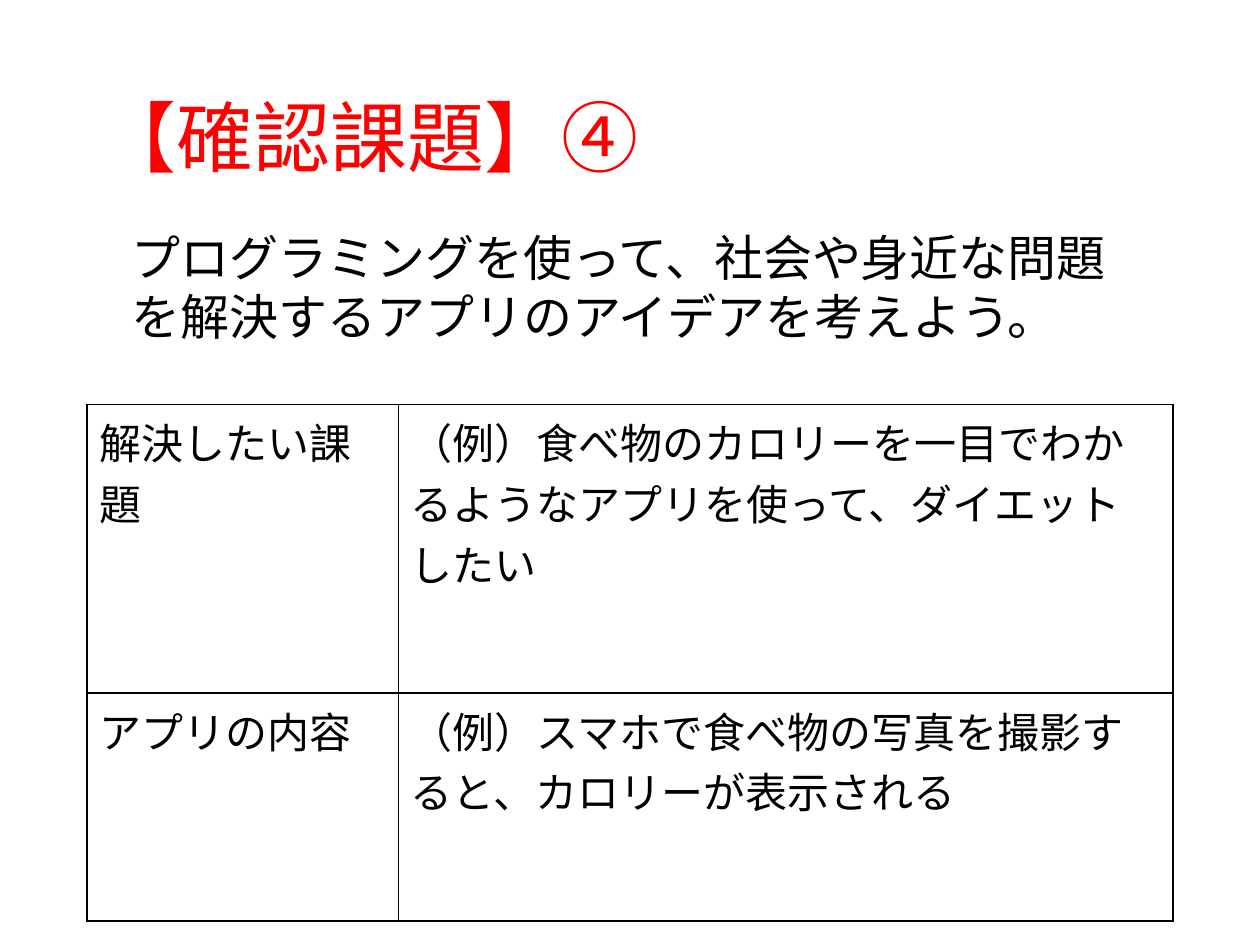
from lxml.etree import SubElement
from pptx import Presentation
from pptx.dml.color import RGBColor as Rgb
from pptx.enum.text import MSO_ANCHOR as Anchor, MSO_AUTO_SIZE as AutoSize, PP_ALIGN as Align
from pptx.oxml.ns import qn
from pptx.util import Cm, Pt

COLORS = {"heading": "FF0000", "text": "000000", "border": "000000"}
FONT = "Arial"
TITLE_ONLY = 5
IDEAS = [
    ("解決したい課題",
     "（例）食べ物のカロリーを一目でわかるようなアプリを使って、ダイエットしたい"),
    ("アプリの内容",
     "（例）スマホで食べ物の写真を撮影すると、カロリーが表示される"),
]


class WorksheetSlide:
    """Holds the style and the current slide."""

    def __init__(self, deck):
        self.slide = deck.slides.add_slide(deck.slide_layouts[TITLE_ONLY])

    def fill_text(self, frame, text, size, color="text", spacing=None):
        frame.word_wrap = True
        paragraph = frame.paragraphs[0]
        paragraph.alignment = Align.LEFT
        paragraph.line_spacing = spacing
        run = paragraph.add_run()
        run.text = text
        for name, value in {"name": FONT, "size": Pt(size)}.items():
            setattr(run.font, name, value)
        run.font.color.rgb = Rgb.from_string(COLORS[color])

    def title(self, text, box):
        heading = self.slide.shapes.title
        for name, value in zip(("left", "top", "width", "height"), box):
            setattr(heading, name, Cm(value))
        frame = heading.text_frame
        frame.auto_size = AutoSize.NONE
        frame.vertical_anchor = Anchor.MIDDLE
        self.fill_text(frame, text, 44, "heading", 0.9)

    def task(self, text, box):
        frame = self.slide.shapes.add_textbox(*map(Cm, box)).text_frame
        frame.auto_size = AutoSize.SHAPE_TO_FIT_TEXT
        self.fill_text(frame, text, 28)

    def border(self, cell):
        properties = cell._tc.get_or_add_tcPr()
        for position, side in enumerate(("lnL", "lnR", "lnT", "lnB")):
            line = properties.makeelement(qn(f"a:{side}"), {"w": str(Pt(1))})
            fill = SubElement(line, qn("a:solidFill"))
            SubElement(fill, qn("a:srgbClr"), val=COLORS["border"])
            properties.insert(position, line)

    def table(self, rows, left, top, widths, heights):
        box = map(Cm, (left, top, sum(widths), sum(heights)))
        grid = self.slide.shapes.add_table(len(rows), len(widths), *box).table
        grid.first_row = grid.horz_banding = False
        for column, width in zip(grid.columns, widths):
            column.width = Cm(width)
        for row, height, texts in zip(grid.rows, heights, rows):
            row.height = Cm(height)
            for cell, text in zip(row.cells, texts):
                cell.fill.background()
                self.border(cell)
                self.fill_text(cell.text_frame, text, 24)


def main():
    deck = Presentation()
    deck.slide_width, deck.slide_height = Cm(25.4), Cm(19.05)
    sheet = WorksheetSlide(deck)

    # Heading and task
    sheet.title("【確認課題】➃", (1.75, 1.02, 21.9, 3.68))
    sheet.task("プログラミングを使って、社会や身近な問題を解決するアプリのアイデアを考えよう。",
               (2.41, 4.47, 20.57, 2.64))

    # Answer table
    sheet.table(IDEAS, 1.75, 8.15, (6.28, 15.62), (5.82, 4.6))

    deck.save("out.pptx")


if __name__ == "__main__":
    main()
